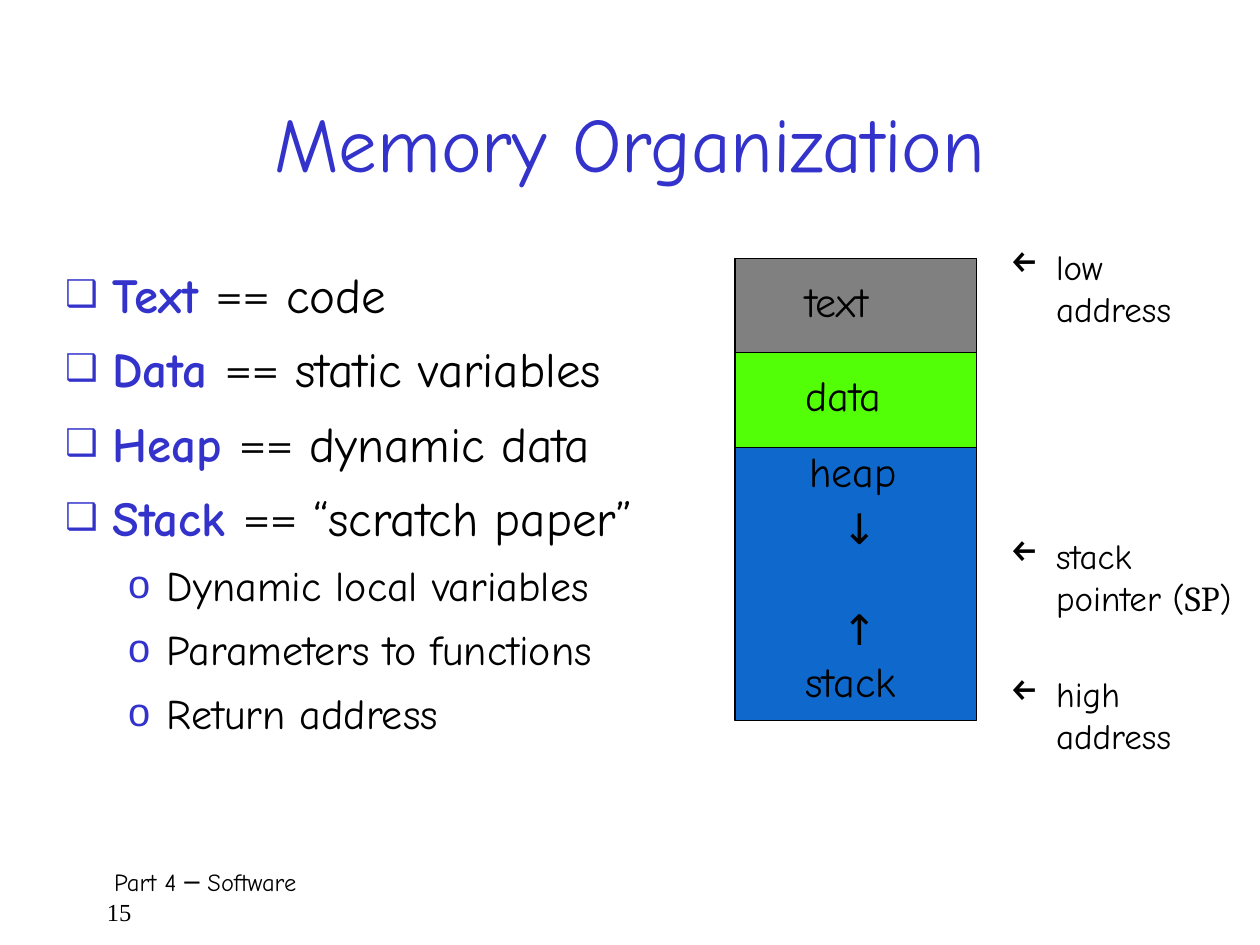
import pptx
import pptx.util
import pptx.dml.color
import pptx.enum.shapes
import pptx.enum.text
import pptx.oxml.ns
import lxml.etree

PX = 7620
INK = {"blue": "3333CC", "black": "000000", "heap": "0F69CC",
       "data": "53FF07", "text": "808080"}
HAND, BOOK, ROMAN = "Comic Neue", "Cambria", "Times New Roman"


def tint(name):
    """Return the named colour."""
    return pptx.dml.color.RGBColor.from_string(INK[name])


def place(shape, box):
    """Move a shape to a box given in px."""
    shape.left, shape.top, shape.width, shape.height = [n * PX for n in box]


def write(para, text, size, face=HAND, ink="black", bold=False):
    """Add one run to a paragraph."""
    run = para.add_run()
    run.text = text
    font = run.font
    font.size, font.name, font.bold = pptx.util.Pt(size), face, bold
    font.color.rgb = tint(ink)


def indent(para, left, hang):
    """Set the left margin and first line indent in px."""
    props = para._p.get_or_add_pPr()
    props.set("marL", str(left * PX))
    props.set("indent", str(hang * PX))
    return props


def bullet(para, mark, left, hang, ink, scale):
    """Give a paragraph a hanging bullet."""
    props = indent(para, left, -hang)
    qn = pptx.oxml.ns.qn
    color = lxml.etree.SubElement(props, qn("a:buClr"))
    lxml.etree.SubElement(color, qn("a:srgbClr")).set("val", INK[ink])
    lxml.etree.SubElement(props, qn("a:buSzPct")).set("val", str(scale * 1000))
    lxml.etree.SubElement(props, qn("a:buChar")).set("char", mark)


def add_text(slide, box):
    """Add an empty wrapping text box and return its frame."""
    shape = slide.shapes.add_textbox(*[n * PX for n in box])
    shape.text_frame.word_wrap = True
    return shape.text_frame


def add_para(frame, first):
    """Return the first paragraph or a new one."""
    return frame.paragraphs[0] if first else frame.add_paragraph()


def add_title(slide, box):
    """Fill the title."""
    title = slide.shapes.title
    place(title, box)
    frame = title.text_frame
    frame.auto_size = pptx.enum.text.MSO_AUTO_SIZE.NONE
    frame.vertical_anchor = pptx.enum.text.MSO_ANCHOR.MIDDLE
    para = frame.paragraphs[0]
    para.alignment = pptx.enum.text.PP_ALIGN.CENTER
    write(para, "Memory Organization", 44, ink="blue")


def add_list(slide, box):
    """Fill the body with terms and their details."""
    body = slide.placeholders[1]
    place(body, box)
    frame = body.text_frame
    frame.auto_size = pptx.enum.text.MSO_AUTO_SIZE.NONE
    terms = [("Text", "code"), ("Data", "static variables"),
             ("Heap", "dynamic data"), ("Stack", "“scratch paper”")]
    for i, (term, sense) in enumerate(terms):
        para = add_para(frame, i == 0)
        para.line_spacing = 1.1
        bullet(para, "❑", 45, 45, "blue", 75)
        write(para, term + " ", 28, ink="blue", bold=True)
        write(para, "==", 28, BOOK)
        write(para, " " + sense, 28)
    for part in ["Dynamic local variables", "Parameters to functions",
                 "Return address"]:
        para = frame.add_paragraph()
        para.level = 1
        para.line_spacing = 1.1
        bullet(para, "o", 97, 37, "blue", 95)
        write(para, part, 24)


def add_stack(slide, box):
    """Draw the memory column and the words in it."""
    left, top, wide, high = box
    row = 90
    bands = [("heap", 2 * row, high - 2 * row), ("data", row, row),
             ("text", 0, row)]
    for name, drop, tall in bands:
        rect = slide.shapes.add_shape(
            pptx.enum.shapes.MSO_SHAPE.RECTANGLE,
            left * PX, (top + drop) * PX, wide * PX, tall * PX)
        rect.shadow.inherit = False
        rect.fill.solid()
        rect.fill.fore_color.rgb = tint(name)
        rect.line.color.rgb = tint("black")
        rect.line.width = pptx.util.Pt(0.75)
    words = [("text", 55, 10), ("data", 55, 100), ("heap", 59, 172),
             ("↓", 90, 227), ("↑", 90, 323), ("stack", 55, 372)]
    for word, shift, drop in words:
        frame = add_text(slide, (left + shift, top + drop, 135, 68))
        write(frame.paragraphs[0], word, 24)


def add_marks(slide, box):
    """Label the addresses beside the column."""
    left, top, wide, high = box
    marks = [(0, "low", [("address", HAND)]),
             (275, "stack", [("pointer (", HAND), ("SP", BOOK), (")", HAND)]),
             (407, "high", [("address", HAND)])]
    for drop, head, tail in marks:
        frame = add_text(slide, (left, top + drop, wide, high))
        para = frame.paragraphs[0]
        bullet(para, "←", 44, 44, "black", 100)
        write(para, head, 20)
        para = frame.add_paragraph()
        indent(para, 44, 0)
        for text, face in tail:
            write(para, text, 20, face)


def add_foot(slide, box):
    """Write the part name and the page number."""
    frame = add_text(slide, box)
    para = frame.paragraphs[0]
    indent(para, 7, 0)
    write(para, "Part 4 ─ Software", 14)
    write(frame.add_paragraph(), "15", 14, ROMAN)


def main():
    """Build and save the slide."""
    deck = pptx.Presentation()
    deck.slide_width, deck.slide_height = 1200 * PX, 900 * PX
    slide = deck.slides.add_slide(deck.slide_layouts[1])
    add_foot(slide, (90, 820, 1030, 60))
    add_title(slide, (90, 60, 1020, 150))
    add_list(slide, (50, 240, 630, 560))
    add_stack(slide, (700, 246, 230, 440))
    add_marks(slide, (950, 228, 250, 106))
    deck.save("out.pptx")


if __name__ == "__main__":
    main()
